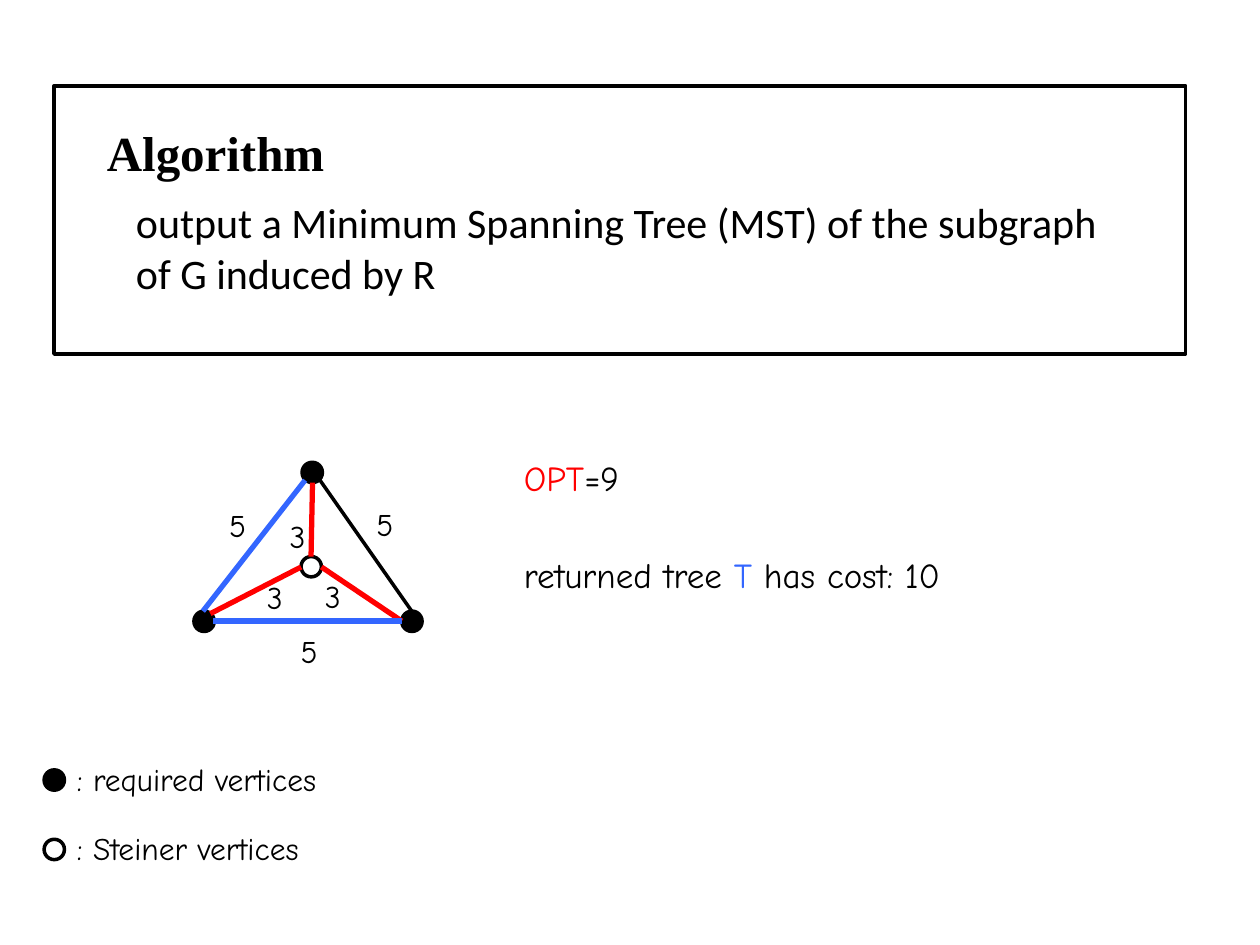
import pptx
import pptx.util
import pptx.dml.color
import pptx.enum.shapes
import pptx.enum.text
import pptx.oxml

Cm = pptx.util.Cm
Pt = pptx.util.Pt
COLORS = {"black": "000000", "white": "FFFFFF", "red": "FF0000", "blue": "3366FF"}
HAND_FONT = "Comic Neue"
VERTEX_SIZE = 0.41


def rgb(name):
    return pptx.dml.color.RGBColor.from_string(COLORS[name])


def write_runs(shape, runs, size, font, wrap=True, bold=False):
    frame = shape.text_frame
    frame.word_wrap = wrap
    frame.auto_size = pptx.enum.text.MSO_AUTO_SIZE.SHAPE_TO_FIT_TEXT
    frame.vertical_anchor = pptx.enum.text.MSO_ANCHOR.TOP
    paragraph = frame.paragraphs[0]
    paragraph.alignment = pptx.enum.text.PP_ALIGN.LEFT
    paragraph.line_spacing = 1.0
    paragraph.space_before = Pt(0)
    for text, color in runs:
        run = paragraph.add_run()
        run.text = text
        run.font.size = Pt(size)
        run.font.name = font
        run.font.bold = bold
        run.font.color.rgb = rgb(color)


def add_text(slide, left, top, width, height, runs, size, font=HAND_FONT, wrap=True):
    shape = slide.shapes.add_textbox(Cm(left), Cm(top), Cm(width), Cm(height))
    write_runs(shape, runs, size, font, wrap)


def add_outlined(slide, kind, left, top, width, height, fill=None):
    shape = slide.shapes.add_shape(kind, Cm(left), Cm(top), Cm(width), Cm(height))
    shape.shadow.inherit = False
    if fill:
        shape.fill.solid()
        shape.fill.fore_color.rgb = rgb(fill)
    else:
        shape.fill.background()
    shape.line.color.rgb = rgb("black")
    shape.line.width = Pt(2)


def add_vertex(slide, left, top, fill):
    oval = pptx.enum.shapes.MSO_SHAPE.OVAL
    add_outlined(slide, oval, left, top, VERTEX_SIZE, VERTEX_SIZE, fill)


def add_edge(slide, start, end, color, width):
    straight = pptx.enum.shapes.MSO_CONNECTOR.STRAIGHT
    edge = slide.shapes.add_connector(
        straight, Cm(start[0]), Cm(start[1]), Cm(end[0]), Cm(end[1]))
    edge.line.color.rgb = rgb(color)
    edge.line.width = Pt(width)
    properties = edge._element.spPr
    properties.append(properties.makeelement(pptx.oxml.ns.qn("a:effectLst"), {}))


def add_algorithm(slide, left, top, width, height):
    title = slide.shapes.title
    title.left, title.top = Cm(left + 0.81), Cm(top + 0.61)
    title.width, title.height = Cm(5.21), Cm(1.45)
    write_runs(title, [("Algorithm", "black")], 28, "Times New Roman", bold=True)
    statement = "output a Minimum Spanning Tree (MST) of the subgraph of G induced by R"
    add_text(slide, left + 1.4, top + 2.11, 20.12, 2.31,
             [(statement, "black")], 24, "Calibri")
    add_outlined(slide, pptx.enum.shapes.MSO_SHAPE.RECTANGLE, left, top, width, height)


def add_graph(slide, left, top):
    vertices = [(0, 3, "black"), (2.18, 0, "black"), (4.19, 3, "black"),
                (2.16, 1.9, "white")]
    edges = [
        ((0.33, 3.05), (2.16, 2.11), "red", 3),
        ((4.19, 3.2), (2.57, 2.11), "red", 3),
        ((2.36, 1.9), (2.39, 0.41), "red", 3),
        ((0.18, 3), (2.24, 0.36), "blue", 3),
        ((4.39, 3), (2.54, 0.36), "black", 2),
        ((0.38, 3.2), (4.19, 3.2), "blue", 3),
    ]
    costs = [("5", 0.46, 0.76), ("5", 3.43, 0.74), ("5", 1.9, 3.3),
             ("3", 1.68, 0.97), ("3", 2.39, 2.18), ("3", 1.22, 2.21)]
    for x, y, fill in vertices:
        add_vertex(slide, left + x, top + y, fill)
    for (x1, y1), (x2, y2), color, width in edges:
        add_edge(slide, (left + x1, top + y1), (left + x2, top + y2), color, width)
    for cost, x, y in costs:
        add_text(slide, left + x, top + y, 0.91, 1.02, [(cost, "black")], 18, wrap=False)


def add_legend(slide, left, top):
    entries = [(": required vertices", "black", 6.07), (": Steiner vertices", "white", 5.79)]
    for row, (label, fill, width) in enumerate(entries):
        y = top + row * 1.4
        add_vertex(slide, left, y + 0.33, fill)
        add_text(slide, left + VERTEX_SIZE, y, width, 1.02,
                 [(label, "black")], 18, wrap=False)


def add_costs(slide, left, top, width):
    lines = [
        [("OPT", "red"), ("=9", "black")],
        [("returned tree ", "black"), ("T", "blue"), (" has cost: 10", "black")],
    ]
    for row, runs in enumerate(lines):
        add_text(slide, left, top + row * 1.96, width, 1.12, runs, 20)


def main():
    presentation = pptx.Presentation()
    presentation.slide_width, presentation.slide_height = Cm(25.4), Cm(19.05)
    slide = presentation.slides.add_slide(presentation.slide_layouts[5])
    add_algorithm(slide, 1.09, 1.73, 22.81, 5.41)
    add_graph(slide, 3.91, 9.32)
    add_legend(slide, 0.89, 15.19)
    add_costs(slide, 10.31, 9.07, 11.99)
    presentation.save("out.pptx")


if __name__ == "__main__":
    main()
